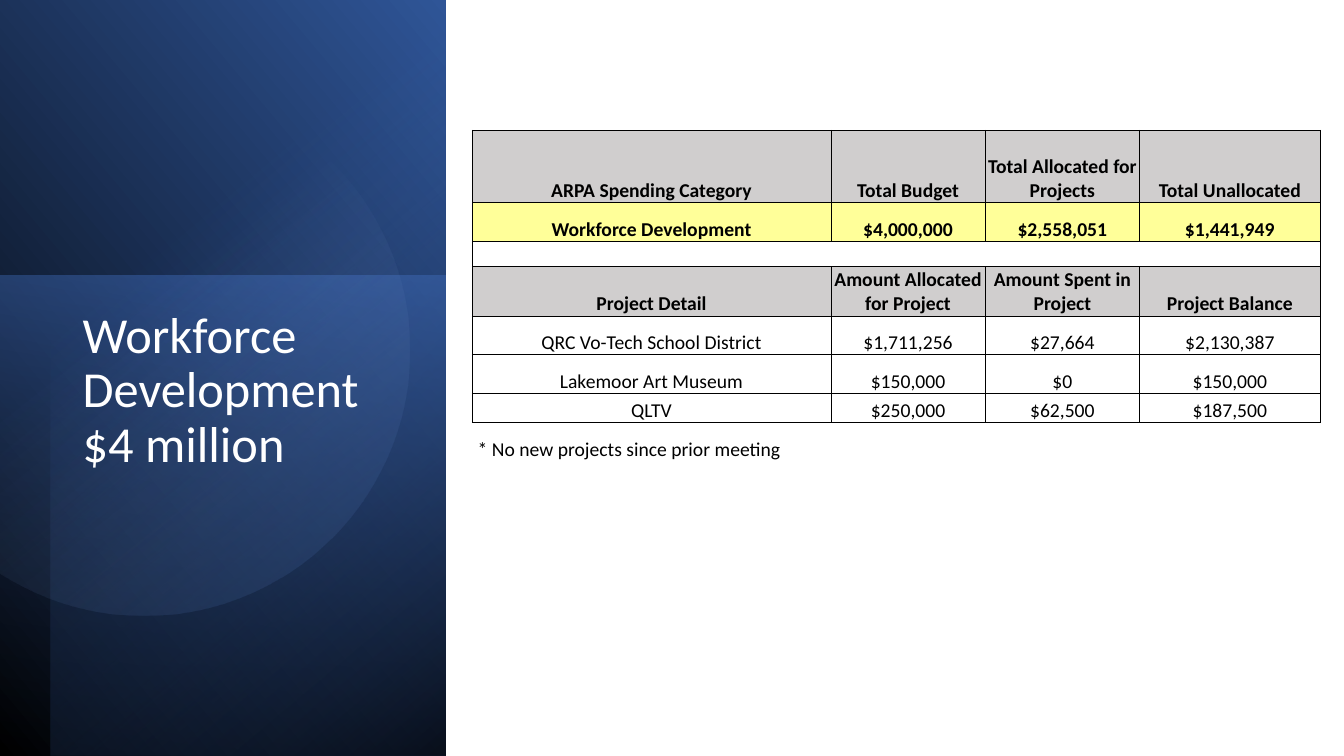
from math import cos, radians, sin

from lxml.etree import SubElement
from pptx import Presentation
from pptx.dml.color import RGBColor
from pptx.enum.shapes import MSO_SHAPE
from pptx.enum.text import MSO_ANCHOR, PP_ALIGN
from pptx.oxml import parse_xml
from pptx.oxml.ns import nsdecls, qn
from pptx.util import Cm, Pt

GREY, YELLOW, WHITE, BLACK = "D0CECE", "FFFF99", "FFFFFF", "000000"
COLS = [9.04, 3.89, 3.89, 4.55]
ROWS = [
    (1.83, GREY, True, ["ARPA Spending Category", "Total Budget",
                        "Total Allocated for Projects", "Total Unallocated"]),
    (0.98, YELLOW, True, ["Workforce Development", "$4,000,000",
                          "$2,558,051", "$1,441,949"]),
    (0.63, WHITE, False, []),
    (1.24, GREY, True, ["Project Detail", "Amount Allocated for Project",
                        "Amount Spent in Project", "Project Balance"]),
    (0.98, WHITE, False, ["QRC Vo-Tech School District", "$1,711,256",
                          "$27,664", "$2,130,387"]),
    (0.98, WHITE, False, ["Lakemoor Art Museum", "$150,000", "$0", "$150,000"]),
    (0.73, WHITE, False, ["QLTV", "$250,000", "$62,500", "$187,500"]),
]


def color(code):
    """Return the colour for a hex string."""
    return RGBColor.from_string(code)


def write(frame, text, size=14, tint=BLACK, bold=False, align=PP_ALIGN.LEFT,
          anchor=MSO_ANCHOR.TOP, space=1.0):
    """Put formatted text into a text frame."""
    frame.word_wrap = True
    frame.vertical_anchor = anchor
    para = frame.paragraphs[0]
    para.text = text
    para.alignment = align
    para.line_spacing = space
    for run in para.runs:
        run.font.name = "Calibri"
        run.font.size = Pt(size)
        run.font.bold = bold
        run.font.color.rgb = color(tint)
    if not text:
        SubElement(para._p, qn("a:endParaRPr"), sz=str(size * 100))


def shade(shape, stops, angle):
    """Fill a shape with a gradient of (place, colour, opacity) stops."""
    shape.shadow.inherit = False
    shape.line.fill.background()
    marks = "".join(
        f'<a:gs pos="{place * 1000}"><a:srgbClr val="{code}">'
        f'<a:alpha val="{alpha * 1000}"/></a:srgbClr></a:gs>'
        for place, code, alpha in stops)
    grad = parse_xml(
        f'<a:gradFill {nsdecls("a")} rotWithShape="1"><a:gsLst>{marks}</a:gsLst>'
        f'<a:lin ang="{round(angle * 60000)}" scaled="0"/></a:gradFill>')
    shape._element.spPr.find(qn("a:ln")).addprevious(grad)


def panel(slide, box, turn, flip, stops, angle):
    """Add a quarter-turned gradient rectangle that covers the given box."""
    left, top, wide, high = box
    shift = (wide - high) / 2
    shape = slide.shapes.add_shape(MSO_SHAPE.RECTANGLE, Cm(left + shift),
                                   Cm(top - shift), Cm(high), Cm(wide))
    shape.rotation = turn
    if flip:
        shape._element.spPr.find(qn("a:xfrm")).set("flipH", "1")
    shade(shape, stops, angle)


def disc(slide, mid, high, radius, stops, angle):
    """Add a gradient disc cut off at the left edge of the slide."""
    points = [(Cm(max(0, mid + radius * cos(radians(deg)))),
               Cm(high + radius * sin(radians(deg))))
              for deg in range(-123, 124, 3)]
    build = slide.shapes.build_freeform(*points[0])
    build.add_line_segments(points[1:], close=True)
    shade(build.convert_to_shape(), stops, angle)


def border(cell):
    """Draw thin black lines on all sides of a cell."""
    props = cell._tc.get_or_add_tcPr()
    for place, side in enumerate(("lnL", "lnR", "lnT", "lnB")):
        props.insert(place, parse_xml(
            f'<a:{side} {nsdecls("a")} w="6350"><a:solidFill>'
            f'<a:srgbClr val="{BLACK}"/></a:solidFill></a:{side}>'))


def budget(slide, left, top):
    """Add the budget table."""
    table = slide.shapes.add_table(
        len(ROWS), len(COLS), Cm(left), Cm(top), Cm(sum(COLS)),
        Cm(sum(row[0] for row in ROWS))).table
    for col, wide in zip(table.columns, COLS):
        col.width = Cm(wide)
    for r, (high, fill, bold, texts) in enumerate(ROWS):
        table.rows[r].height = Cm(high)
        for c, text in enumerate(texts or [""] * len(COLS)):
            cell = table.cell(r, c)
            cell.margin_left = cell.margin_right = Cm(0)
            cell.margin_top = cell.margin_bottom = Cm(0)
            cell.fill.solid()
            cell.fill.fore_color.rgb = color(fill)
            write(cell.text_frame, text, bold=bold, align=PP_ALIGN.CENTER)
            cell.vertical_anchor = MSO_ANCHOR.BOTTOM
            border(cell)
        if not texts:
            table.cell(r, 0).merge(table.cell(r, len(COLS) - 1))


def head(slide, text, left, top, wide, high):
    """Place the title above the panels."""
    title = slide.shapes.title
    title.left, title.top = Cm(left), Cm(top)
    title.width, title.height = Cm(wide), Cm(high)
    write(title.text_frame, text, size=36, tint=WHITE, space=0.9)
    slide.shapes._spTree.append(title._element)


def note(slide, text, left, top, wide, high):
    """Add a line of text."""
    box = slide.shapes.add_textbox(Cm(left), Cm(top), Cm(wide), Cm(high))
    write(box.text_frame, text)


def main():
    """Build and save the slide."""
    deck = Presentation()
    deck.slide_width, deck.slide_height = Cm(33.87), Cm(19.05)
    slide = deck.slides.add_slide(deck.slide_layouts[5])
    panel(slide, (0, 0, 11.23, 19.05), 90, True,
          [(0, BLACK, 100), (100, "2F5597", 100)], 310)
    panel(slide, (0, 6.95, 11.23, 12.1), 270, False,
          [(0, "4472C4", 50), (100, "203864", 0)], 190)
    panel(slide, (1.27, 0, 9.96, 19.05), 270, True,
          [(0, BLACK, 59), (69, "4472C4", 0)], 220)
    disc(slide, 3.63, 8.82, 6.68,
         [(39, "8FAADC", 0), (100, "2F5597", 26)], 51.6)
    head(slide, "Workforce Development\v$4 million", 1.83, 7.68, 8, 8.53)
    budget(slide, 11.9, 3.28)
    note(slide, "* No new projects since prior meeting", 11.79, 10.88, 10.74, 0.86)
    deck.save("out.pptx")


if __name__ == "__main__":
    main()
